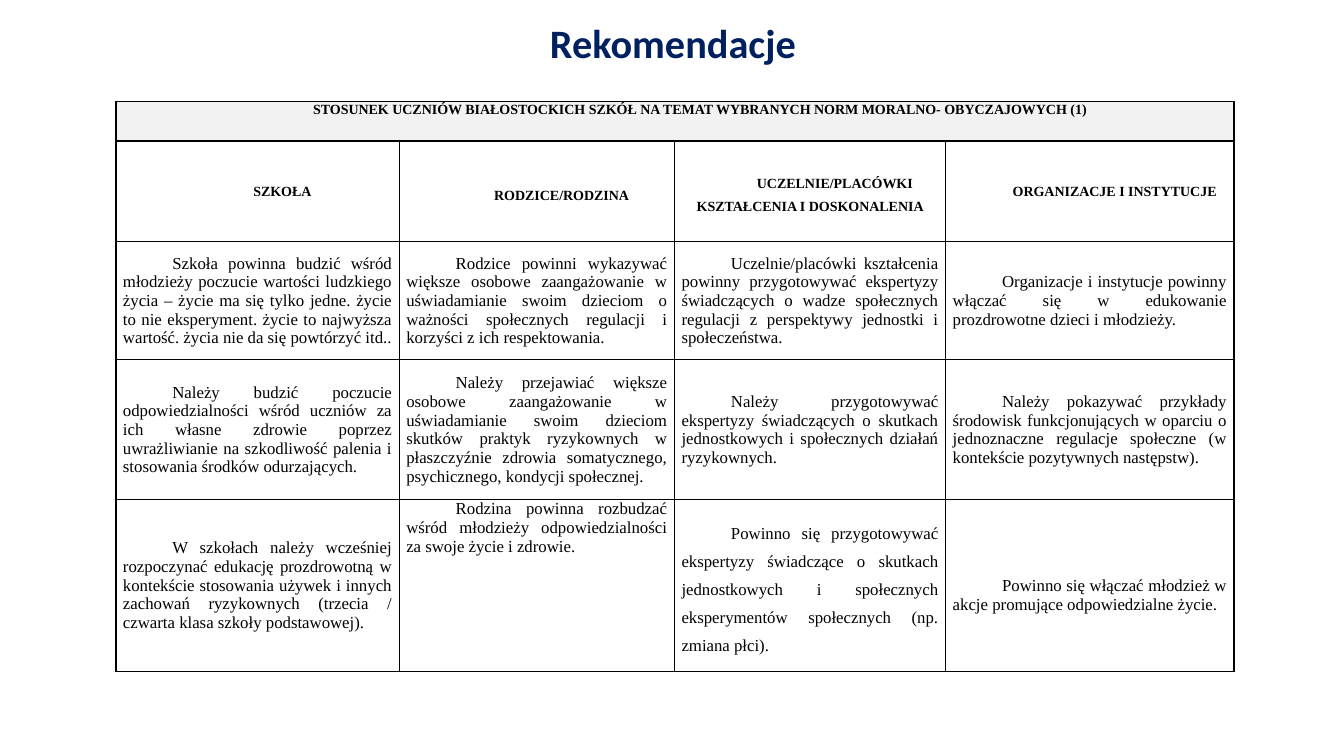
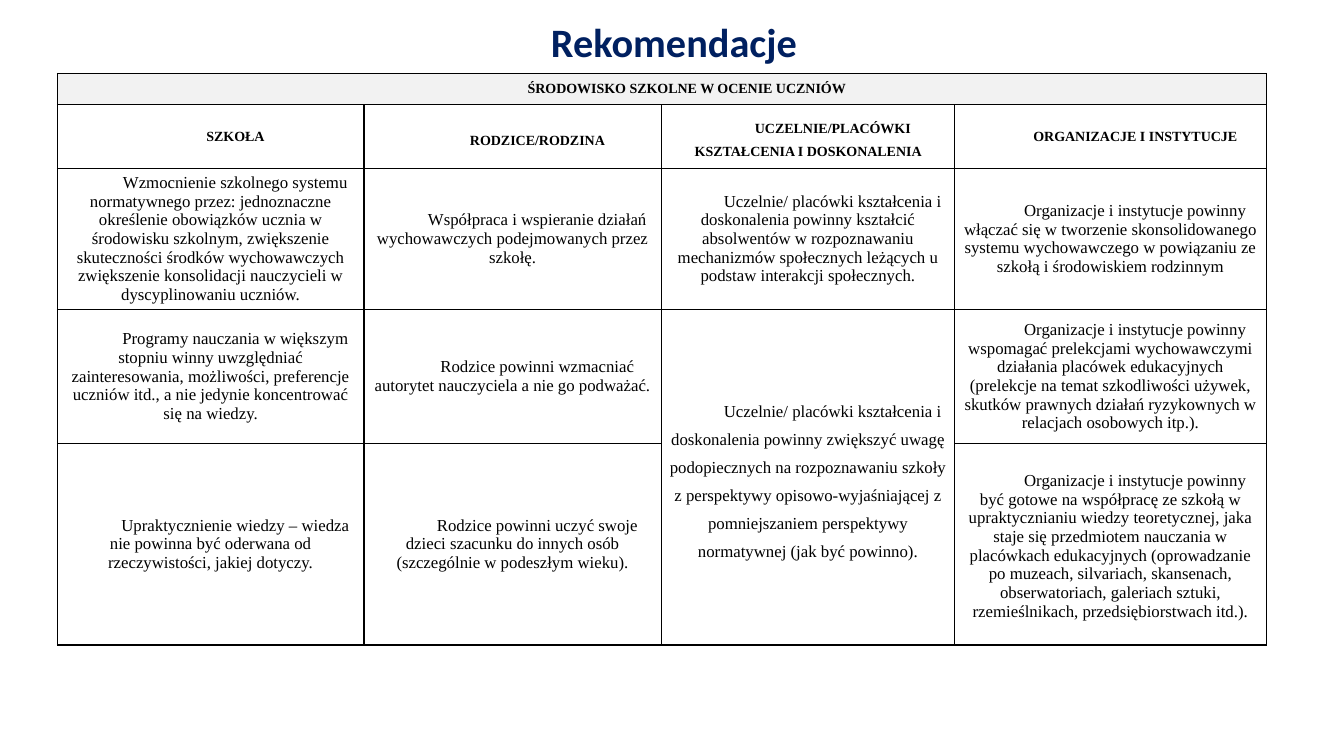
from itertools import product

from lxml.etree import SubElement
from pptx import Presentation
from pptx.dml.color import RGBColor
from pptx.enum.text import MSO_ANCHOR, PP_ALIGN
from pptx.oxml.ns import qn
from pptx.util import Inches, Pt

NAVY = RGBColor(0x00, 0x20, 0x60)
BLACK = RGBColor(0x00, 0x00, 0x00)
GREY = RGBColor(0xF2, 0xF2, 0xF2)
TITLE_FONT = "Calibri"
TABLE_FONT = "Times New Roman"
INDENT = Inches(0.49)
MARGIN = Inches(0.07)

HEADINGS = [
    "SZKOŁA",
    "RODZICE/RODZINA",
    "UCZELNIE/PLACÓWKI KSZTAŁCENIA I DOSKONALENIA",
    "ORGANIZACJE I INSTYTUCJE",
]

NORMS = [
    [
        "Szkoła powinna budzić wśród młodzieży poczucie wartości ludzkiego życia – życie ma się "
        "tylko jedne. życie to nie eksperyment. życie to najwyższa wartość. życia nie da się "
        "powtórzyć itd..",
        "Rodzice powinni wykazywać większe osobowe zaangażowanie w uświadamianie swoim dzieciom "
        "o ważności społecznych regulacji i korzyści z ich respektowania.",
        "Uczelnie/placówki kształcenia powinny przygotowywać ekspertyzy świadczących o wadze "
        "społecznych regulacji z perspektywy jednostki i społeczeństwa.",
        "Organizacje i instytucje powinny włączać się w edukowanie prozdrowotne dzieci i młodzieży.",
    ],
    [
        "Należy budzić poczucie odpowiedzialności wśród uczniów za ich własne zdrowie poprzez "
        "uwrażliwianie na szkodliwość palenia i stosowania środków odurzających.",
        "Należy przejawiać większe osobowe zaangażowanie w uświadamianie swoim dzieciom skutków "
        "praktyk ryzykownych w płaszczyźnie zdrowia somatycznego, psychicznego, kondycji społecznej.",
        "Należy przygotowywać ekspertyzy świadczących o skutkach jednostkowych i społecznych "
        "działań ryzykownych.",
        "Należy pokazywać przykłady środowisk funkcjonujących w oparciu o jednoznaczne regulacje "
        "społeczne (w kontekście pozytywnych następstw).",
    ],
    [
        "W szkołach należy wcześniej rozpoczynać edukację prozdrowotną w kontekście stosowania "
        "używek i innych zachowań ryzykownych (trzecia / czwarta klasa szkoły podstawowej).",
        "Rodzina powinna rozbudzać wśród młodzieży odpowiedzialności za swoje życie i zdrowie.",
        "Powinno się przygotowywać ekspertyzy świadczące o skutkach jednostkowych i społecznych "
        "eksperymentów społecznych (np. zmiana płci).",
        "Powinno się włączać młodzież w akcje promujące odpowiedzialne życie.",
    ],
]

SCHOOL = [
    [
        "Wzmocnienie szkolnego systemu normatywnego przez: jednoznaczne określenie obowiązków "
        "ucznia w środowisku szkolnym, zwiększenie skuteczności środków wychowawczych zwiększenie "
        "konsolidacji nauczycieli w dyscyplinowaniu uczniów.",
        "Współpraca i wspieranie działań wychowawczych podejmowanych przez szkołę.",
        "Uczelnie/ placówki kształcenia i doskonalenia powinny kształcić absolwentów "
        "w rozpoznawaniu mechanizmów społecznych leżących u podstaw interakcji społecznych.",
        "Organizacje i instytucje powinny włączać się w tworzenie skonsolidowanego systemu "
        "wychowawczego w powiązaniu ze szkołą i środowiskiem rodzinnym",
    ],
    [
        "Programy nauczania w większym stopniu winny uwzględniać zainteresowania, możliwości, "
        "preferencje uczniów itd., a nie jedynie koncentrować się na wiedzy.",
        "Rodzice powinni wzmacniać autorytet nauczyciela a nie go podważać.",
        "Uczelnie/ placówki kształcenia i doskonalenia powinny zwiększyć uwagę podopiecznych na "
        "rozpoznawaniu szkoły z perspektywy opisowo-wyjaśniającej z pomniejszaniem perspektywy "
        "normatywnej (jak być powinno).",
        "Organizacje i instytucje powinny wspomagać prelekcjami wychowawczymi działania placówek "
        "edukacyjnych (prelekcje na temat szkodliwości używek, skutków prawnych działań "
        "ryzykownych w relacjach osobowych itp.).",
    ],
    [
        "Upraktycznienie wiedzy – wiedza nie powinna być oderwana od rzeczywistości, jakiej dotyczy.",
        "Rodzice powinni uczyć swoje dzieci szacunku do innych osób (szczególnie w podeszłym wieku).",
        None,
        "Organizacje i instytucje powinny być gotowe na współpracę ze szkołą w upraktycznianiu "
        "wiedzy teoretycznej, jaka staje się przedmiotem nauczania w placówkach edukacyjnych "
        "(oprowadzanie po muzeach, silvariach, skansenach, obserwatoriach, galeriach sztuki, "
        "rzemieślnikach, przedsiębiorstwach itd.).",
    ],
]


def add_run(p, text, font, size, color, bold):
    """Append one formatted run to a paragraph."""
    r = p.add_run()
    r.text = text
    r.font.name, r.font.size, r.font.bold = font, Pt(size), bold
    r.font.color.rgb = color


def add_title(slide, box):
    """Place the shared title in the given box."""
    sp = slide.shapes.title
    sp.left, sp.top, sp.width, sp.height = map(Inches, box)
    tf = sp.text_frame
    tf.word_wrap = True
    tf.vertical_anchor = MSO_ANCHOR.MIDDLE
    p = tf.paragraphs[0]
    p.alignment = PP_ALIGN.CENTER
    p.line_spacing = 0.9
    add_run(p, "Rekomendacje", TITLE_FONT, 28.8, NAVY, True)


def set_borders(cell):
    """Draw a thin black line on every side of a cell."""
    tcPr = cell._tc.get_or_add_tcPr()
    for i, side in enumerate(("a:lnL", "a:lnR", "a:lnT", "a:lnB")):
        ln = SubElement(tcPr, qn(side), w=str(Pt(1)))
        fill = SubElement(ln, qn("a:solidFill"))
        SubElement(fill, qn("a:srgbClr"), val=str(BLACK))
        tcPr.insert(i, ln)


def write_cell(cell, text, align, heading, loose):
    """Write one paragraph with a first-line indent."""
    p = cell.text_frame.paragraphs[0]
    p.alignment = align
    if loose:
        p.line_spacing = 1.5
    pPr = p._p.get_or_add_pPr()
    pPr.set("marL", "0")
    pPr.set("indent", str(INDENT))
    add_run(p, text, TABLE_FONT, 10 if heading else 12, BLACK, heading)


def add_grid(slide, origin, widths, heights, rows, align, loose, top, gaps, merges):
    """Build the recommendation table at the given origin."""
    left, y = map(Inches, origin)
    frame = slide.shapes.add_table(len(heights), len(widths), left, y,
                                   Inches(sum(widths)), Inches(sum(heights)))
    table = frame.table
    table.first_row = table.horz_banding = False
    for col, width in zip(table.columns, widths):
        col.width = Inches(width)
    for row, height in zip(table.rows, heights):
        row.height = Inches(height)
    for first, last in merges:
        table.cell(*first).merge(table.cell(*last))
    for pos in product(range(len(heights)), range(len(widths))):
        r, c = pos
        cell = table.cell(r, c)
        cell.margin_left = cell.margin_right = MARGIN
        cell.margin_top, cell.margin_bottom = Inches(gaps.get(pos, 0)), 0
        cell.vertical_anchor = MSO_ANCHOR.TOP if pos in top else MSO_ANCHOR.MIDDLE
        if r == 0:
            cell.fill.solid()
            cell.fill.fore_color.rgb = GREY
        else:
            cell.fill.background()
        set_borders(cell)
        if rows[r][c]:
            heading = r < 2
            write_cell(cell, rows[r][c], PP_ALIGN.CENTER if heading else align,
                       heading, pos in loose)


def add_recommendations(prs, title_box, caption, body, merges=(), **grid):
    """Add a slide with a title and a captioned table."""
    slide = prs.slides.add_slide(prs.slide_layouts[5])
    add_title(slide, title_box)
    rows = [[caption, None, None, None], HEADINGS, *body]
    add_grid(slide, rows=rows, merges=[((0, 0), (0, 3)), *merges], **grid)


def main():
    """Build and save the presentation."""
    prs = Presentation()
    prs.slide_width, prs.slide_height = Inches(13.33), Inches(7.5)
    add_recommendations(
        prs, (2.75, 0.17, 7.85, 0.56),
        "STOSUNEK UCZNIÓW BIAŁOSTOCKICH SZKÓŁ NA TEMAT WYBRANYCH NORM MORALNO- OBYCZAJOWYCH (1)",
        NORMS, origin=(1.15, 1.01), widths=(2.81, 2.73, 2.69, 2.86),
        heights=(0.39, 1, 1.17, 1.39, 1.7), align=PP_ALIGN.JUSTIFY,
        loose={(1, 1), (1, 2), (4, 2)}, top={(0, 0), (4, 1)}, gaps={(4, 3): 0.19})
    add_recommendations(
        prs, (2.73, 0.16, 7.91, 0.57), "ŚRODOWISKO SZKOLNE W OCENIE UCZNIÓW",
        SCHOOL, merges=[((3, 2), (4, 2))], origin=(0.57, 0.73),
        widths=(3.04, 2.95, 2.91, 3.09), heights=(0.31, 0.63, 1.4, 1.33, 2),
        align=PP_ALIGN.CENTER, loose={(1, 1), (1, 2), (3, 2)}, top={(4, 3)},
        gaps={(4, 3): 0.28})
    prs.save("out.pptx")


if __name__ == "__main__":
    main()
